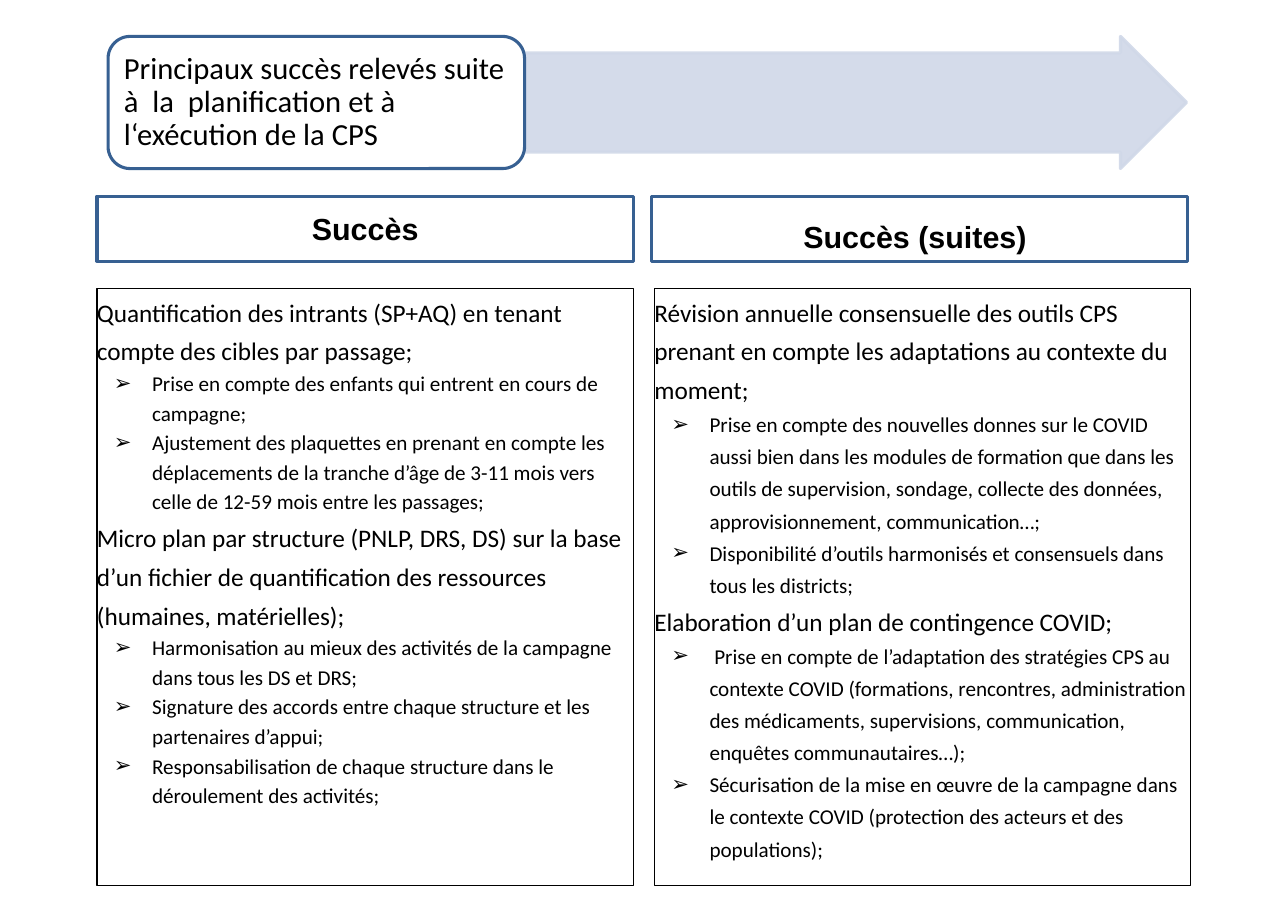
from lxml import etree
from pptx import Presentation
from pptx.dml.color import RGBColor
from pptx.enum.shapes import MSO_SHAPE
from pptx.enum.text import MSO_ANCHOR, MSO_AUTO_SIZE, PP_ALIGN
from pptx.oxml.ns import qn
from pptx.util import Pt

BLACK = RGBColor(0x00, 0x00, 0x00)
WHITE = RGBColor(0xFF, 0xFF, 0xFF)
BLUE = RGBColor(0x37, 0x60, 0x92)
PALE_BLUE = RGBColor(0xD0, 0xD8, 0xE8)
LEFT, CENTER = PP_ALIGN.LEFT, PP_ALIGN.CENTER
TOP, MIDDLE, BOTTOM = MSO_ANCHOR.TOP, MSO_ANCHOR.MIDDLE, MSO_ANCHOR.BOTTOM
ARROW, RECTANGLE = MSO_SHAPE.RIGHT_ARROW, MSO_SHAPE.RECTANGLE
ROUNDED = MSO_SHAPE.ROUNDED_RECTANGLE

TITLE = "Principaux succès relevés suite à  la  planification et à l‘exécution de la CPS"
COLUMN_WIDTH = 350.6
HEADING_SPACING = 1.28
HEADER_FONT = {"name": "Arial", "size": Pt(19.9), "bold": True}
HEADING_FONT = {"name": "Calibri", "size": Pt(16.5), "bold": False}
ITEM_FONT = {"name": "Calibri", "size": Pt(13.8), "bold": False}
TITLE_FONT = {"name": "Calibri", "size": Pt(20), "bold": False}

COLUMNS = [
    {
        "header": "Succès", "header_left": 63.4, "body_left": 63.4,
        "anchor": MIDDLE, "item_spacing": 1.17,
        "topics": [
            ("Quantification des intrants (SP+AQ) en tenant compte des cibles par passage;", [
                "Prise en compte des enfants qui entrent en cours de campagne;",
                "Ajustement des plaquettes en prenant en compte les déplacements de la "
                "tranche d’âge de 3-11 mois vers celle de 12-59 mois entre les passages;",
            ]),
            ("Micro plan par structure (PNLP, DRS, DS) sur la base d’un fichier de "
             "quantification des ressources (humaines, matérielles);", [
                 "Harmonisation au mieux des activités de la campagne dans tous les DS et DRS;",
                 "Signature des accords entre chaque structure et les partenaires d’appui;",
                 "Responsabilisation de chaque structure dans le déroulement des activités;",
             ]),
        ],
    },
    {
        "header": "Succès (suites) ", "header_left": 425.5, "body_left": 427.7,
        "anchor": BOTTOM, "item_spacing": 1.27,
        "topics": [
            ("Révision annuelle consensuelle des outils CPS prenant en compte les "
             "adaptations au contexte du moment;", [
                 "Prise en compte des nouvelles donnes sur le COVID aussi bien dans les "
                 "modules de formation que dans les outils de supervision, sondage, "
                 "collecte des données, approvisionnement, communication…;",
                 "Disponibilité d’outils harmonisés et consensuels dans tous les districts;",
             ]),
            ("Elaboration d’un plan de contingence COVID;", [
                " Prise en compte de l’adaptation des stratégies CPS au contexte COVID "
                "(formations, rencontres, administration des médicaments, supervisions, "
                "communication, enquêtes communautaires…);",
                "Sécurisation de la mise en œuvre de la campagne dans le contexte COVID "
                "(protection des acteurs et des populations);",
            ]),
        ],
    },
]

deck = Presentation()
deck.slide_width, deck.slide_height = Pt(841.68), Pt(595.44)
page = deck.slides.add_slide(deck.slide_layouts[5])


def add_box(kind, left, top, width, height, fill, line, weight):
    box = page.shapes.add_shape(kind, Pt(left), Pt(top), Pt(width), Pt(height))
    box.shadow.inherit = False
    if fill is None:
        box.fill.background()
    else:
        box.fill.solid()
        box.fill.fore_color.rgb = fill
    box.line.color.rgb = line
    box.line.width = Pt(weight)
    return box


def write(para, text, font, align=LEFT, spacing=1.0):
    para.alignment = align
    para.line_spacing = spacing
    para.space_before = para.space_after = Pt(0)
    span = para.add_run()
    span.text = text
    span.font.color.rgb = BLACK
    for name, value in font.items():
        setattr(span.font, name, value)


# Banner: translucent arrow and rounded title frame
arrow = add_box(ARROW, 342.7, 23.8, 432.7, 86.4, PALE_BLUE, PALE_BLUE, 2)
arrow.adjustments[0], arrow.adjustments[1] = 0.75, 0.5
for color in arrow._element.spPr.iter(qn("a:srgbClr")):
    etree.SubElement(color, qn("a:alpha"), val="90000")
add_box(ROUNDED, 70.6, 23.8, 272.2, 86.4, WHITE, BLUE, 2)

# Title, brought in front of its frame
title = page.shapes.title
title.left, title.top, title.width, title.height = Pt(74.9), Pt(28.1), Pt(264.2), Pt(77.8)
page.shapes._spTree.append(title._element)
frame = title.text_frame
frame.word_wrap = True
frame.auto_size = MSO_AUTO_SIZE.NONE
frame.vertical_anchor = MIDDLE
frame.margin_left = frame.margin_right = Pt(6)
frame.margin_top = frame.margin_bottom = Pt(3)
write(frame.paragraphs[0], TITLE, TITLE_FONT, spacing=0.9)

for column in COLUMNS:
    # Column header
    header = add_box(RECTANGLE, column["header_left"], 128.2, COLUMN_WIDTH, 42.5, WHITE, BLUE, 2)
    frame = header.text_frame
    frame.vertical_anchor = column["anchor"]
    frame.margin_top = frame.margin_bottom = Pt(4)
    write(frame.paragraphs[0], column["header"], HEADER_FONT, CENTER)

    # Column body: headings with arrow bullets below
    body = add_box(RECTANGLE, column["body_left"], 188.6, COLUMN_WIDTH, 390.2, None, BLACK, 0.75)
    frame = body.text_frame
    frame.word_wrap = True
    frame.vertical_anchor = TOP
    frame.margin_left = frame.margin_right = frame.margin_top = frame.margin_bottom = 0
    para = frame.paragraphs[0]
    for number, (heading, items) in enumerate(column["topics"]):
        if number:
            para = frame.add_paragraph()
        write(para, heading, HEADING_FONT, spacing=HEADING_SPACING)
        for item in items:
            para = frame.add_paragraph()
            write(para, item, ITEM_FONT, spacing=column["item_spacing"])
            para.level = 1
            properties = para._p.get_or_add_pPr()
            properties.set("marL", str(Pt(36)))
            properties.set("indent", str(-Pt(25)))
            etree.SubElement(properties, qn("a:buFont"), typeface="Arial")
            etree.SubElement(properties, qn("a:buChar"), char="➢")

deck.save("out.pptx")
